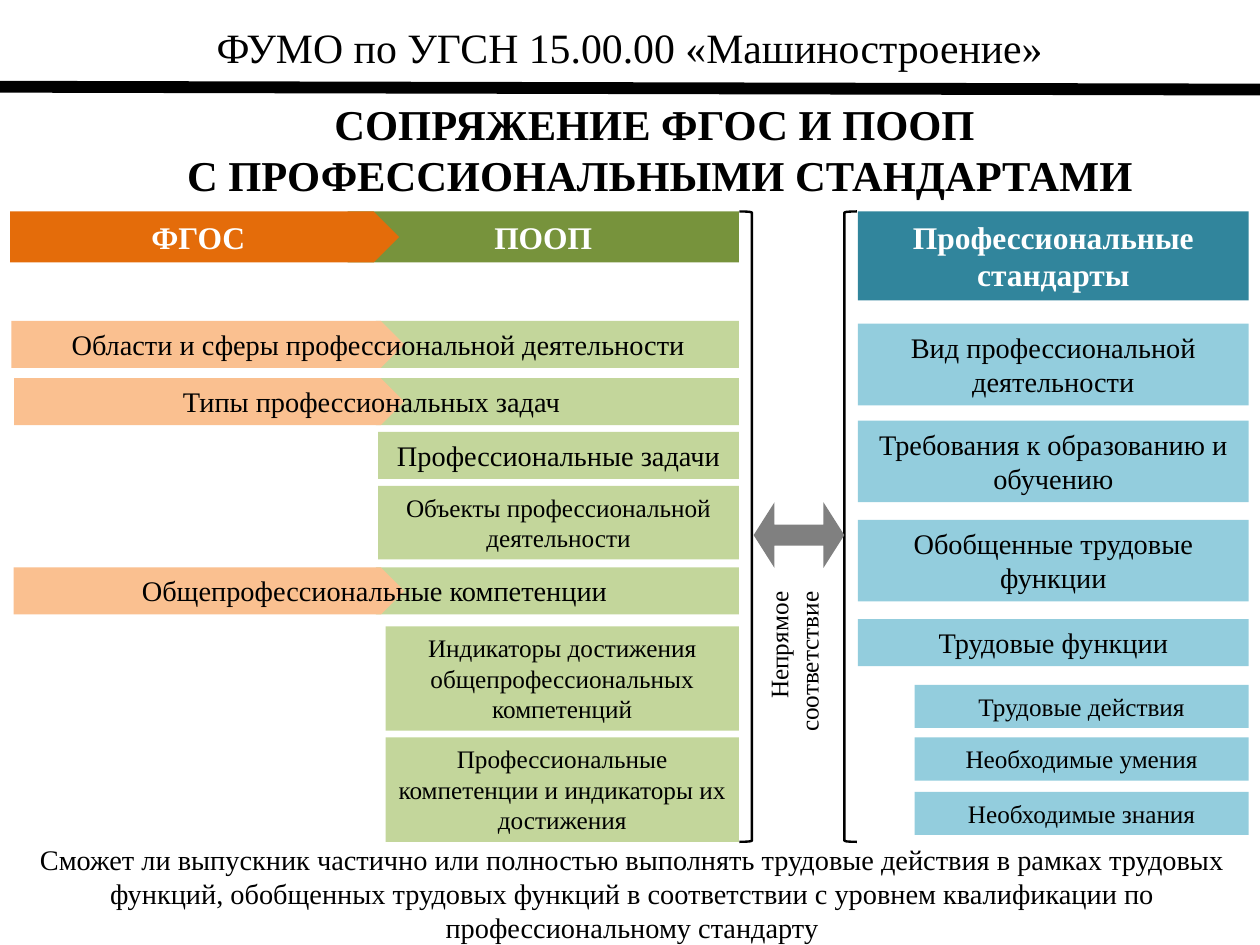
from lxml import etree
from pptx import Presentation
from pptx.dml.color import RGBColor
from pptx.enum.shapes import MSO_CONNECTOR as Connector, MSO_SHAPE as Preset
from pptx.enum.text import MSO_ANCHOR as Anchor, MSO_AUTO_SIZE as AutoSize, PP_ALIGN as Align
from pptx.oxml.ns import qn
from pptx.util import Inches, Pt

BLACK, WHITE = RGBColor(0, 0, 0), RGBColor(255, 255, 255)
ORANGE, PEACH = RGBColor(0xE4, 0x6C, 0x0A), RGBColor(0xFA, 0xC0, 0x90)
GREEN, LIME = RGBColor(0x77, 0x93, 0x3C), RGBColor(0xC3, 0xD6, 0x9B)
TEAL, SKY = RGBColor(0x31, 0x85, 0x9C), RGBColor(0x93, 0xCD, 0xDD)
GRAY = RGBColor(0x80, 0x80, 0x80)
FONT = "Times New Roman"

HEADER = "ФУМО по УГСН 15.00.00 «Машиностроение»"
TITLE = ["СОПРЯЖЕНИЕ ФГОС И ПООП ", "С ПРОФЕССИОНАЛЬНЫМИ СТАНДАРТАМИ"]
LINK_LABEL = "Непрямое соответствие"
QUESTION = ("Сможет ли выпускник частично или полностью выполнять трудовые действия "
            "в рамках трудовых функций, обобщенных трудовых функций в соответствии "
            "с уровнем квалификации по профессиональному стандарту")

WIDTH, HEIGHT = 22.22, 16.67
TOP, BOTTOM = 3.73, 14.85
PLATE_RIGHT, PROGRAM_RIGHT = 7.13, 13.03
STANDARD_LEFT, STANDARD_RIGHT = 15.13, 22.02
ROW = 0.83
WIDE_INSETS, NARROW_INSETS = (0.22, 0.11), (0.1, 0.05)

# label, left, top, right, height, preset, fill, size
HEADINGS = [
    ("ПООП", 6.13, PROGRAM_RIGHT, 0.9, Preset.RECTANGLE, GREEN),
    ("ФГОС", 0.18, 7.04, 0.9, Preset.PENTAGON, ORANGE),
    ("Профессиональные стандарты", STANDARD_LEFT, STANDARD_RIGHT, 1.57, Preset.RECTANGLE, TEAL),
]
SHARED_ROWS = [
    ("Области и сферы профессиональной деятельности", 5.66, 0.2, 0.48, 12.86),
    ("Типы профессиональных задач", 6.67, 0.25, 0.2, 12.9),
    ("Общепрофессиональные компетенции", 10.01, 0.24, 0.33, 12.88),
]
PROGRAM_ROWS = [
    ("Профессиональные задачи", 6.67, 7.62, ROW, 36),
    ("Объекты профессиональной деятельности", 6.67, 8.57, 1.3, 32),
    ("Индикаторы достижения общепрофессиональных компетенций", 6.8, 11.05, 1.84, 32),
    ("Профессиональные компетенции и индикаторы их достижения", 6.8, 13.01, 1.84, 32),
]
STANDARD_ROWS = [
    ("Вид профессиональной деятельности", STANDARD_LEFT, 5.71, 1.44, 36),
    ("Требования к образованию и обучению", STANDARD_LEFT, 7.42, 1.44, 36),
    ("Обобщенные трудовые функции", STANDARD_LEFT, 9.17, 1.44, 36),
    ("Трудовые функции", STANDARD_LEFT, 10.92, ROW, 36),
    ("Трудовые действия", STANDARD_LEFT + 1, 12.08, 0.76, 32),
    ("Необходимые умения", STANDARD_LEFT + 1, 13.01, 0.76, 32),
    ("Необходимые знания", STANDARD_LEFT + 1, 13.97, 0.76, 32),
]


def write(shape, lines, size, color=BLACK, bold=False, align=Align.CENTER,
          anchor=Anchor.TOP, insets=WIDE_INSETS):
    frame = shape.text_frame
    frame.word_wrap = True
    frame.auto_size = AutoSize.NONE
    frame.vertical_anchor = anchor
    frame.margin_left = frame.margin_right = Inches(insets[0])
    frame.margin_top = frame.margin_bottom = Inches(insets[1])
    paragraph = frame.paragraphs[0]
    paragraph.alignment = align
    for index, line in enumerate(lines):
        if index:
            paragraph.add_line_break()
        run = paragraph.add_run()
        run.text = line
        run.font.name, run.font.size, run.font.bold = FONT, Pt(size), bold
        run.font.color.rgb = color


def add_block(slide, preset, left, top, right, height, fill=None):
    shape = slide.shapes.add_shape(
        preset, Inches(left), Inches(top), Inches(right - left), Inches(height))
    shape.shadow.inherit = False
    if fill is None:
        shape.fill.background()
        shape.line.color.rgb = BLACK
        shape.line.width = Pt(3)
    else:
        shape.fill.solid()
        shape.fill.fore_color.rgb = fill
        shape.line.fill.background()
    return shape


def add_text(slide, text, left, top, right, height, size, **style):
    box = slide.shapes.add_textbox(
        Inches(left), Inches(top), Inches(right - left), Inches(height))
    write(box, [text], size, **style)
    return box


def add_title(slide):
    title = slide.shapes.title
    title.left, title.top, title.width, title.height = map(Inches, (2.17, 1.93, 18.94, 1.41))
    write(title, TITLE, 54, bold=True, anchor=Anchor.MIDDLE)


def add_columns(slide):
    for label, left, right, height, preset, fill in HEADINGS:
        block = add_block(slide, preset, left, TOP, right, height, fill)
        write(block, [label], 40, WHITE, bold=True)
    for label, top, plate_left, text_left, text_right in SHARED_ROWS:
        add_block(slide, Preset.RECTANGLE, 6.63, top, PROGRAM_RIGHT, ROW, LIME)
        add_block(slide, Preset.PENTAGON, plate_left, top, PLATE_RIGHT, ROW, PEACH)
        add_text(slide, label, text_left, top, text_right, ROW, 36)
    for rows, right, fill in ((PROGRAM_ROWS, PROGRAM_RIGHT, LIME),
                              (STANDARD_ROWS, STANDARD_RIGHT, SKY)):
        for label, left, top, height, size in rows:
            block = add_block(slide, Preset.RECTANGLE, left, top, right, height, fill)
            write(block, [label], size)


def add_link(slide):
    for preset, left in ((Preset.RIGHT_BRACKET, 13.04), (Preset.LEFT_BRACKET, 14.89)):
        add_block(slide, preset, left, TOP, left + 0.22, BOTTOM - TOP)
    arrow = add_block(slide, Preset.LEFT_RIGHT_ARROW, 13.29, 8.86, 14.89, 1.16, GRAY)
    arrow.adjustments[0] = arrow.adjustments[1] = 0.318
    label = add_text(slide, LINK_LABEL, 13.41, 10.34, 14.69, 2.83, 32,
                     align=Align.RIGHT, insets=NARROW_INSETS)
    label.text_frame._txBody.bodyPr.set("vert", "vert270")


def add_header(slide):
    add_text(slide, HEADER, 0, 0.28, WIDTH, 1.12, 53)
    rule = slide.shapes.add_connector(
        Connector.STRAIGHT, 0, Inches(1.53), Inches(WIDTH), Inches(1.58))
    rule.line.color.rgb = BLACK
    rule.line.width = Pt(15)
    etree.SubElement(rule._element.spPr, qn("a:effectLst"))


def main():
    presentation = Presentation()
    presentation.slide_width, presentation.slide_height = Inches(WIDTH), Inches(HEIGHT)
    slide = presentation.slides.add_slide(presentation.slide_layouts[5])
    add_title(slide)
    add_columns(slide)
    add_link(slide)
    add_text(slide, QUESTION, 0.25, 14.81, 22.04, 1.92, 36, insets=NARROW_INSETS)
    add_header(slide)
    presentation.save("out.pptx")


if __name__ == "__main__":
    main()
